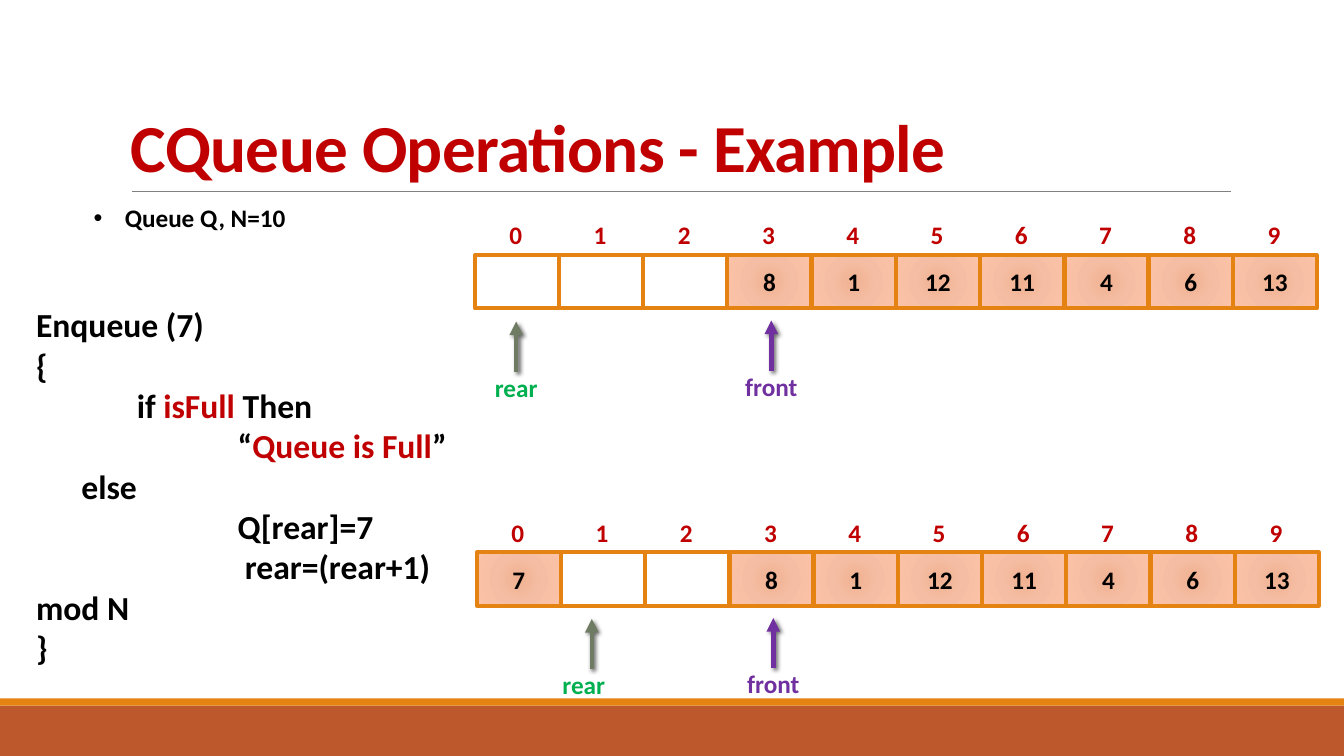
from lxml import etree
from pptx import Presentation
from pptx.dml.color import RGBColor
from pptx.enum.shapes import MSO_CONNECTOR, MSO_SHAPE
from pptx.enum.text import MSO_ANCHOR, PP_ALIGN
from pptx.oxml import parse_xml
from pptx.oxml.ns import nsdecls, qn
from pptx.util import Inches, Pt

RECT = MSO_SHAPE.RECTANGLE
STRAIGHT = MSO_CONNECTOR.STRAIGHT
CENTER = PP_ALIGN.CENTER
MIDDLE, BOTTOM = MSO_ANCHOR.MIDDLE, MSO_ANCHOR.BOTTOM

FONT = "Calibri"
BLACK, WHITE, RED = "000000", "FFFFFF", "C00000"
ORANGE, RUST, GRAY = "E48312", "BD582C", "808080"
PURPLE, GREEN, SAGE = "7030A0", "00B050", "6F7B63"
PEACH_STOPS = [(0, "F0B191"), (45, "F5BEA4"), (100, "FDC3A8")]

CELL_W, CELL_H = 0.83, 0.53
PITCH = 7.52 / 9
LABEL_H = 0.4

CODE = [  # first-line indent, then the coloured pieces of the line
    (0, [("Enqueue (7)", BLACK)]),
    (0, [("{", BLACK)]),
    (1, [("if ", BLACK), ("isFull ", RED), ("Then", BLACK)]),
    (2, [("“", BLACK), ("Queue is Full", RED), ("”", BLACK)]),
    (0.45, [("else", BLACK)]),
    (2, [("Q[rear]=7", BLACK)]),
    (2.07, [("rear=(rear+1) mod N", BLACK)]),
    (0, [("}", BLACK)]),
]
STORED = ["8", "1", "12", "11", "4", "6", "13"]


def rgb(color):
    return RGBColor.from_string(color)


def style_run(r, size, color):
    r.font.name = FONT
    r.font.size = Pt(size)
    r.font.bold = True
    r.font.color.rgb = rgb(color)


def set_indent(p, first, left=0):
    pPr = p._p.get_or_add_pPr()
    pPr.set("marL", str(Inches(left)))
    pPr.set("indent", str(Inches(first)))
    return pPr


def add_text(shapes, text, x, y, w, h, size, color, wrap=True):
    tf = shapes.add_textbox(Inches(x), Inches(y), Inches(w), Inches(h)).text_frame
    tf.word_wrap = wrap
    tf.text = text
    style_run(tf.paragraphs[0].runs[0], size, color)
    return tf


def add_label(shapes, text, center, y, color, w):
    tf = add_text(shapes, text, center - w / 2, y, w, LABEL_H, 18, color, wrap=False)
    tf.paragraphs[0].alignment = CENTER


def add_rect(shapes, x, y, w, h, color):
    s = shapes.add_shape(RECT, Inches(x), Inches(y), Inches(w), Inches(h))
    s.shadow.inherit = False
    s.fill.solid()
    s.fill.fore_color.rgb = rgb(color)
    s.line.fill.background()
    return s


def fill_peach(s):
    """Give a shape the radial peach gradient of an occupied cell."""
    stops = "".join(
        f'<a:gs pos="{pos * 1000}"><a:srgbClr val="{color}"/></a:gs>'
        for pos, color in PEACH_STOPS)
    grad = parse_xml(
        f'<a:gradFill {nsdecls("a")} rotWithShape="1"><a:gsLst>{stops}</a:gsLst>'
        '<a:path path="circle"><a:fillToRect l="100000" t="100000" r="100000" '
        'b="100000"/></a:path></a:gradFill>')
    spPr = s._element.spPr
    spPr.replace(spPr.find(qn("a:solidFill")), grad)


def add_cell(shapes, x, y, value):
    s = add_rect(shapes, x, y, CELL_W, CELL_H, WHITE)
    s.line.color.rgb = rgb(ORANGE)
    s.line.width = Pt(2.75)
    if value:
        fill_peach(s)
        tf = s.text_frame
        tf.vertical_anchor = MIDDLE
        tf.text = value
        tf.paragraphs[0].alignment = CENTER
        style_run(tf.paragraphs[0].runs[0], 18, BLACK)


def add_line(shapes, x1, y1, x2, y2, color, width):
    """Add a straight line and return it with its empty effect list."""
    line = shapes.add_connector(STRAIGHT, Inches(x1), Inches(y1), Inches(x2), Inches(y2))
    line.line.color.rgb = rgb(color)
    line.line.width = Pt(width)
    effects = etree.SubElement(line._element.spPr, qn("a:effectLst"))
    return line, effects


def add_pointer(shapes, name, x, y, color, text_color, label_x):
    """Add a shadowed upward arrow with its tip at (x, y) and a name below."""
    arrow, effects = add_line(shapes, x, y + 0.5, x, y, color, 3.25)
    etree.SubElement(arrow.line._get_or_add_ln(), qn("a:tailEnd"), type="triangle")
    effects.append(parse_xml(
        f'<a:outerShdw {nsdecls("a")} blurRad="{Pt(3)}" dist="{Pt(2)}" dir="2700000" '
        'rotWithShape="0"><a:srgbClr val="000000"><a:alpha val="60000"/></a:srgbClr>'
        '</a:outerShdw>'))
    add_label(shapes, name, label_x, y + 0.45, text_color, 0.76)


def add_queue(slide, x, y, values, rear_x, rear_label_x):
    shapes = slide.shapes.add_group_shape().shapes
    for i, value in enumerate(values):
        cell_x = x + i * PITCH
        add_cell(shapes, cell_x, y, value)
        add_label(shapes, str(i), cell_x + CELL_W / 2 - 0.01, y - 0.4, RED, 0.34)
    front_x = x + 2.94
    add_pointer(shapes, "front", front_x, y + 0.65, PURPLE, PURPLE, front_x)
    add_pointer(shapes, "rear", rear_x, y + 0.66, SAGE, GREEN, rear_label_x)


def add_title(slide):
    tf = add_text(slide.shapes, "CQueue Operations - Example", 1.2, 0.31, 11, 1.59, 48, RED)
    tf.vertical_anchor = BOTTOM
    p = tf.paragraphs[0]
    p.line_spacing = 0.85
    p.runs[0]._r.get_or_add_rPr().set("spc", "-50")


def add_bullet(slide):
    tf = add_text(slide.shapes, "Queue Q, N=10", 0.83, 1.96, 2.47, LABEL_H, 18, BLACK)
    pPr = set_indent(tf.paragraphs[0], -0.31, 0.31)
    etree.SubElement(pPr, qn("a:buFont"), typeface="Arial")
    etree.SubElement(pPr, qn("a:buChar"), char="•")


def add_code(slide):
    box = slide.shapes.add_textbox(Inches(0.26), Inches(2.97), Inches(4.63), Inches(3.33))
    tf = box.text_frame
    tf.word_wrap = True
    for i, (indent, pieces) in enumerate(CODE):
        p = tf.add_paragraph() if i else tf.paragraphs[0]
        set_indent(p, indent)
        for text, color in pieces:
            r = p.add_run()
            r.text = text
            style_run(r, 24, color)


def main():
    prs = Presentation()
    prs.slide_width, prs.slide_height = Inches(13.33), Inches(7.5)
    slide = prs.slides.add_slide(prs.slide_layouts[6])
    add_rect(slide.shapes, 0, 7, 13.33, 0.5, RUST)
    add_rect(slide.shapes, 0, 6.93, 13.33, 0.07, ORANGE)
    add_line(slide.shapes, 1.31, 1.9, 12.21, 1.9, GRAY, 0.5)
    add_title(slide)
    add_bullet(slide)
    add_code(slide)
    add_queue(slide, 4.71, 2.53, ["", "", ""] + STORED, 5.12, 5.12)
    add_queue(slide, 4.73, 5.48, ["7", "", ""] + STORED, 5.87, 5.79)
    prs.save("out.pptx")


if __name__ == "__main__":
    main()
